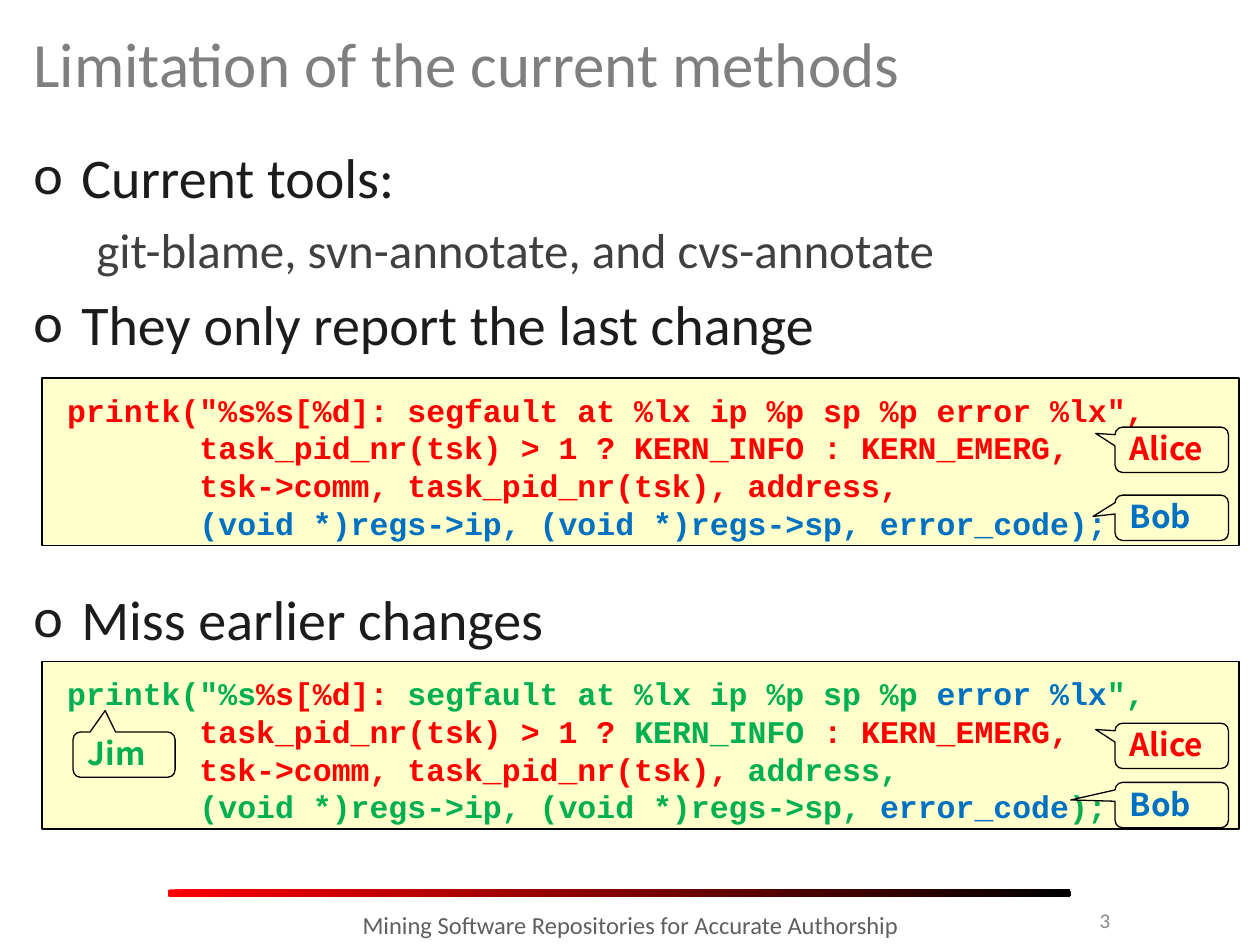
from lxml.etree import SubElement
from pptx import Presentation
from pptx.dml.color import RGBColor
from pptx.enum.shapes import MSO_SHAPE as Shape
from pptx.enum.text import MSO_ANCHOR as Anchor, PP_ALIGN as Align
from pptx.oxml.ns import qn
from pptx.util import Inches, Pt

RED, BLUE, GREEN = "FF0000", "0070C0", "00B050"
BLACK, CREAM, INK = "000000", "FFFFCC", "1C1C1C"
BODY, MONO, LABEL = "Calibri", "Courier New", "Noto Sans CJK JP"
WIDTH, HEIGHT = 10, 7.5
MARGIN = WIDTH / 60
INDENT = 0.38

TITLE = "Limitation of the current methods"
FOOTER = "Mining Software Repositories for Accurate Authorship"
PAGE_NUMBER = "3"
TOOLS = [
    ("Current tools:", 0),
    ("git-blame, svn-annotate, and cvs-annotate", 1),
    ("They only report the last change", 0),
]
MISSED = [("Miss earlier changes", 0)]

LISTINGS = [
    {
        "top": 3,
        "lines": [
            [('printk("%s%s[%d]: segfault at %lx ip %p sp %p error %lx",', RED)],
            [("       task_pid_nr(tsk) > 1 ? KERN_INFO : KERN_EMERG,", RED)],
            [("       tsk->comm, task_pid_nr(tsk), address,", RED)],
            [("       (void *)regs->ip, (void *)regs->sp, error_code);", BLUE)],
        ],
        "authors": [
            ("Alice", RED, 8.85, 0.39, 0.9, (-0.671, -0.361)),
            ("Bob", BLUE, 8.85, 0.93, 0.9, (-0.695, -0.029)),
        ],
    },
    {
        "top": 5.25,
        "lines": [
            [('printk("%s', GREEN), ("%s[%d]: ", RED),
             ("segfault at %lx ip %p sp %p ", GREEN), ("error %lx", BLUE), ('",', GREEN)],
            [("       task_pid_nr(tsk) > 1 ? ", RED), ("KERN_INFO ", GREEN),
             (": KERN_EMERG,", RED)],
            [("       tsk->comm, task_pid_nr(tsk), ", RED), ("address,", GREEN)],
            [("       (void *)regs->ip, (void *)regs->sp, ", GREEN),
             ("error_code", BLUE), (");", GREEN)],
        ],
        "authors": [
            ("Alice", RED, 8.85, 0.49, 0.9, (-0.671, -0.361)),
            ("Bob", BLUE, 8.85, 0.96, 0.9, (-0.89, -0.112)),
            ("Jim", GREEN, 0.58, 0.56, 0.81, (-0.185, -0.973)),
        ],
    },
]


def color(value):
    """Turn a hex string into a colour."""
    return RGBColor.from_string(value)


def add_span(para, text, size, ink, font=BODY, bold=False):
    """Add one formatted run to a paragraph."""
    span = para.add_run()
    span.text = text
    span.font.size = Pt(size)
    span.font.name = font
    span.font.bold = bold
    span.font.color.rgb = color(ink)


def set_indent(para, left, first=0):
    """Set the left margin and first-line indent in inches."""
    props = para._p.get_or_add_pPr()
    props.set("marL", str(Inches(left)))
    props.set("indent", str(Inches(first)))
    return props


def add_box(page, left, top, width, height):
    """Add a wrapping text box and return its frame."""
    box = page.shapes.add_textbox(*map(Inches, (left, top, width, height)))
    box.text_frame.word_wrap = True
    return box.text_frame


def add_label(page, area, text, size, ink, align, anchor):
    """Add a text box that holds a single line."""
    frame = add_box(page, *area)
    frame.vertical_anchor = anchor
    para = frame.paragraphs[0]
    para.alignment = align
    add_span(para, text, size, ink)


def add_bullets(page, top, height, items):
    """Add an outline whose top level is bulleted."""
    frame = add_box(page, MARGIN, top, 9.58, height)
    for index, (text, level) in enumerate(items):
        para = frame.add_paragraph() if index else frame.paragraphs[0]
        size = 28 if level else 32
        if index:
            para.space_before = Pt(size * 0.2)
        if level:
            para.level = level
            set_indent(para, 0.5)
        else:
            props = set_indent(para, INDENT, -INDENT)
            SubElement(props, qn("a:buFont")).set("typeface", BODY)
            SubElement(props, qn("a:buChar")).set("char", "o")
        add_span(para, text, size, "404040" if level else INK)


def add_panel(page, kind, area, insets):
    """Add an outlined cream shape and return it with its first paragraph."""
    shape = page.shapes.add_shape(kind, *map(Inches, area))
    shape.shadow.inherit = False
    shape.fill.solid()
    shape.fill.fore_color.rgb = color(CREAM)
    shape.line.color.rgb = color(BLACK)
    shape.line.width = Pt(0.75)
    frame = shape.text_frame
    frame.word_wrap = True
    frame.vertical_anchor = Anchor.TOP
    (frame.margin_left, frame.margin_top,
     frame.margin_right, frame.margin_bottom) = map(Inches, insets)
    para = frame.paragraphs[0]
    para.alignment = Align.LEFT
    return shape, para


def add_listing(page, top, lines, authors):
    """Add a code panel with its author callouts."""
    _, para = add_panel(page, Shape.RECTANGLE, (2 * MARGIN, top, 9.5, 1.33), (0, 0.1, 0, 0.1))
    set_indent(para, 0.2)
    for index, line in enumerate(lines):
        if index:
            para.add_line_break()
        for text, ink in line:
            add_span(para, text, 18, ink, MONO, True)
    for name, ink, left, drop, width, tip in authors:
        callout, para = add_panel(page, Shape.ROUNDED_RECTANGULAR_CALLOUT,
                                  (left, top + drop, width, 0.36), (0.1, 0, 0, 0.1))
        callout.adjustments[0], callout.adjustments[1] = tip
        set_indent(para, 0.43, -0.43)
        add_span(para, name, 18, ink, LABEL, True)


def add_rule(page):
    """Add the red to black rule above the footer."""
    rule = page.shapes.add_shape(Shape.ROUNDED_RECTANGLE, *map(Inches, (1.33, 7.06, 7.17, 0.06)))
    rule.shadow.inherit = False
    rule.adjustments[0] = 0.33
    rule.line.fill.background()
    rule.fill.gradient()
    rule.fill.gradient_angle = 0
    for stop, ink, place in zip(rule.fill.gradient_stops, (RED, BLACK), (0, 1)):
        stop.color.rgb = color(ink)
        stop.position = place


def main():
    """Build the slide and save it."""
    deck = Presentation()
    deck.slide_width, deck.slide_height = Inches(WIDTH), Inches(HEIGHT)
    page = deck.slides.add_slide(deck.slide_layouts[6])
    add_rule(page)
    add_label(page, (MARGIN, 0.08, WIDTH - 2 * MARGIN, 0.83), TITLE, 36, "7F7F7F",
              Align.LEFT, Anchor.MIDDLE)
    add_bullets(page, 1.08, 2, TOOLS)
    add_label(page, (7.58, 7.1, 1.33, 0.4), PAGE_NUMBER, 12, "898989", Align.RIGHT, Anchor.MIDDLE)
    add_label(page, (2.42, 7.17, 5.17, 0.4), FOOTER, 14, "5F5F5F", Align.CENTER, Anchor.TOP)
    for listing in LISTINGS:
        add_listing(page, **listing)
    add_bullets(page, 4.59, 0.67, MISSED)
    deck.save("out.pptx")


if __name__ == "__main__":
    main()
